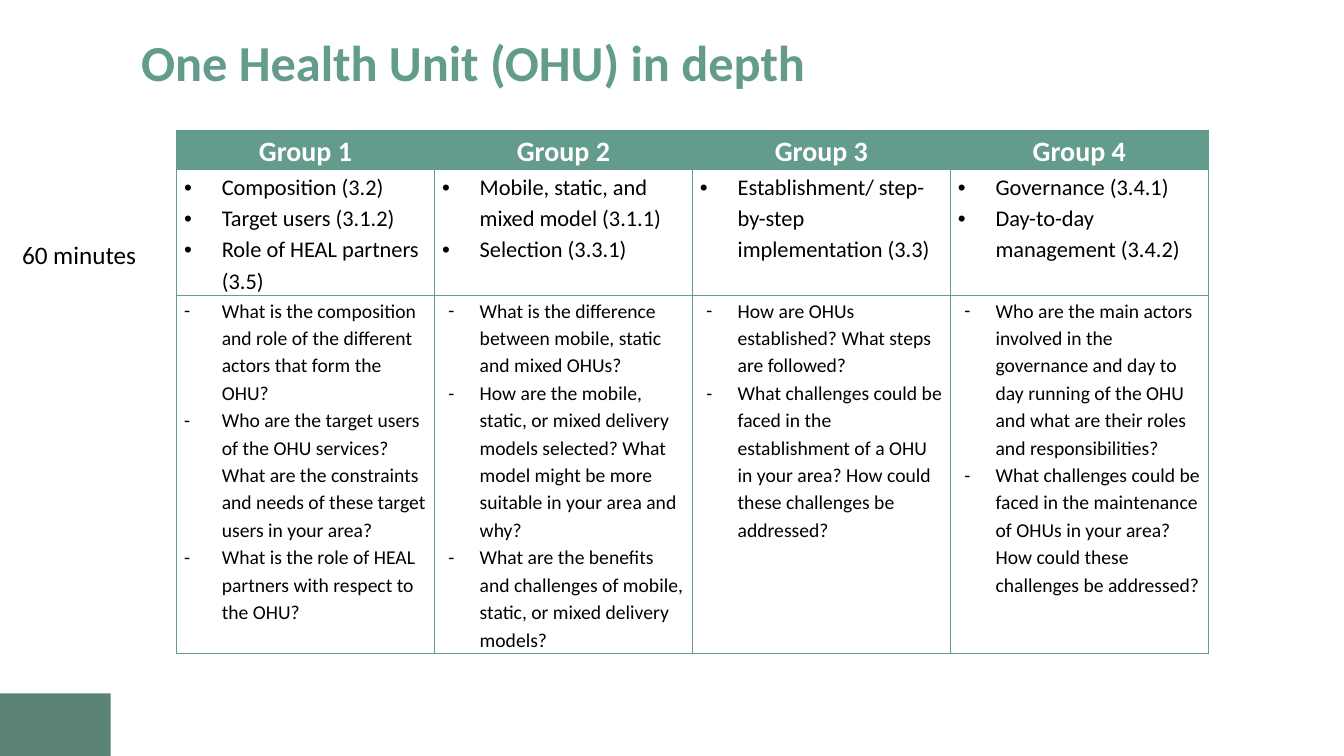
import pptx
import pptx.util
import pptx.dml.color
import pptx.enum.shapes
import pptx.enum.text
import pptx.oxml
import pptx.oxml.ns

Cm = pptx.util.Cm
Pt = pptx.util.Pt
ALIGN = pptx.enum.text.PP_ALIGN
ANCHOR = pptx.enum.text.MSO_ANCHOR

COLORS = {
    "green": "639C8C",
    "corner": "5B8477",
    "white": "FFFFFF",
    "black": "000000",
}
FONT = "Calibri"
COLUMN_WIDTH = 6.5
ROW_HEIGHTS = [0.98, 3.18, 9.02]

# group name, topics, questions
GROUPS = [
    ("Group 1",
     ["Composition (3.2)", "Target users (3.1.2)", "Role of HEAL partners (3.5)"],
     ["What is the composition and role of the different actors that form the OHU?",
      "Who are the target users of the OHU services? What are the constraints and "
      "needs of these target users in your area?",
      "What is the role of HEAL partners with respect to the OHU?"]),
    ("Group 2",
     ["Mobile, static, and mixed model (3.1.1)", "Selection (3.3.1)"],
     ["What is the difference between mobile, static and mixed OHUs?",
      "How are the mobile, static, or mixed delivery models selected? What model "
      "might be more suitable in your area and why?",
      "What are the benefits and challenges of mobile, static, or mixed delivery models?"]),
    ("Group 3",
     ["Establishment/ step-by-step implementation (3.3)"],
     ["How are OHUs established? What steps are followed?",
      "What challenges could be faced in the establishment of a OHU in your area? "
      "How could these challenges be addressed?"]),
    ("Group 4",
     ["Governance (3.4.1)", "Day-to-day management (3.4.2)"],
     ["Who are the main actors involved in the governance and day to day running of "
      "the OHU and what are their roles and responsibilities?",
      "What challenges could be faced in the maintenance of OHUs in your area? "
      "How could these challenges be addressed?"]),
]


def rgb(name):
    return pptx.dml.color.RGBColor.from_string(COLORS[name])


def add_bullet(paragraph, mark, margin, hang):
    """Give the paragraph a bullet; margin and hang are in centimetres."""
    properties = paragraph._p.get_or_add_pPr()
    properties.set("marL", str(Cm(margin)))
    properties.set("indent", str(-Cm(hang)))
    namespace = pptx.oxml.ns.nsdecls("a")
    bullet_font = "Arial" if mark == "•" else FONT
    properties.append(pptx.oxml.parse_xml(f'<a:buFont {namespace} typeface="{bullet_font}"/>'))
    properties.append(pptx.oxml.parse_xml(f'<a:buChar {namespace} char="{mark}"/>'))


def write(frame, lines, size, color="black", bold=False, align=ALIGN.LEFT,
          spacing=None, bullet=None):
    """Fill a text frame; bullet is (mark, margin, hang)."""
    for index, line in enumerate(lines):
        paragraph = frame.paragraphs[0] if index == 0 else frame.add_paragraph()
        paragraph.alignment = align
        if spacing:
            paragraph.line_spacing = spacing
        if bullet:
            add_bullet(paragraph, *bullet)
        run = paragraph.add_run()
        run.text = line
        run.font.name = FONT
        run.font.size = Pt(size)
        run.font.bold = bold
        run.font.color.rgb = rgb(color)


def set_borders(cell):
    properties = cell._tc.get_or_add_tcPr()
    for position, side in enumerate(("lnL", "lnR", "lnT", "lnB")):
        properties.insert(position, pptx.oxml.parse_xml(
            f'<a:{side} {pptx.oxml.ns.nsdecls("a")} w="{Pt(1)}"><a:solidFill>'
            f'<a:srgbClr val="{COLORS["green"]}"/></a:solidFill></a:{side}>'))


def add_corner(slide, left, top, width, height):
    corner = slide.shapes.add_shape(pptx.enum.shapes.MSO_SHAPE.RECTANGLE,
                                    Cm(left), Cm(top), Cm(width), Cm(height))
    corner.shadow.inherit = False
    corner.fill.solid()
    corner.fill.fore_color.rgb = rgb("corner")
    corner.line.fill.background()


def add_heading(slide, left, top, width, height):
    heading = slide.shapes.title
    heading.left, heading.top = Cm(left), Cm(top)
    heading.width, heading.height = Cm(width), Cm(height)
    frame = heading.text_frame
    frame.auto_size = pptx.enum.text.MSO_AUTO_SIZE.NONE
    frame.vertical_anchor = ANCHOR.MIDDLE
    write(frame, ["One Health Unit (OHU) in depth"], 36, "green", bold=True, spacing=0.9)


def add_groups(slide, left, top):
    """Place one column per group: name, topics and questions."""
    table = slide.shapes.add_table(
        len(ROW_HEIGHTS), len(GROUPS), Cm(left), Cm(top),
        Cm(COLUMN_WIDTH * len(GROUPS)), Cm(sum(ROW_HEIGHTS))).table
    table.horz_banding = False
    for row, height in zip(table.rows, ROW_HEIGHTS):
        row.height = Cm(height)
    for number, (name, topics, questions) in enumerate(GROUPS):
        table.columns[number].width = Cm(COLUMN_WIDTH)
        name_cell, topic_cell, question_cell = (
            table.cell(row, number) for row in range(len(ROW_HEIGHTS)))
        for cell in (name_cell, topic_cell, question_cell):
            cell.margin_left = cell.margin_right = Cm(0.19)
            cell.margin_top = cell.margin_bottom = 0
            cell.fill.background()
            set_borders(cell)
        name_cell.fill.solid()
        name_cell.fill.fore_color.rgb = rgb("green")
        write(name_cell.text_frame, [name], 20, "white", bold=True,
              align=ALIGN.CENTER, spacing=1.15)
        name_cell.text_frame.paragraphs[0].space_after = Pt(12)
        write(topic_cell.text_frame, topics, 16, spacing=1.15, bullet=("•", 0.95, 0.95))
        dash = ("-", 0.95, 0.95) if number == 0 else ("-", 0.95, 0.79)
        write(question_cell.text_frame, questions, 14, spacing=1.15, bullet=dash)


def add_duration(slide, left, top, width, height):
    duration = slide.shapes.add_textbox(Cm(left), Cm(top), Cm(width), Cm(height))
    frame = duration.text_frame
    frame.word_wrap = True
    frame.auto_size = pptx.enum.text.MSO_AUTO_SIZE.SHAPE_TO_FIT_TEXT
    write(frame, ["60 minutes"], 18, align=ALIGN.CENTER)


def main():
    deck = pptx.Presentation()
    deck.slide_width, deck.slide_height = Cm(33.87), Cm(19.05)
    slide = deck.slides.add_slide(deck.slide_layouts[5])
    add_corner(slide, 0, 17.47, 2.79, 1.58)
    add_heading(slide, 3.3, 0.74, 28.22, 1.8)
    add_groups(slide, 4.45, 3.28)
    add_duration(slide, 0.23, 5.9, 3.53, 1.03)
    deck.save("out.pptx")


if __name__ == "__main__":
    main()
